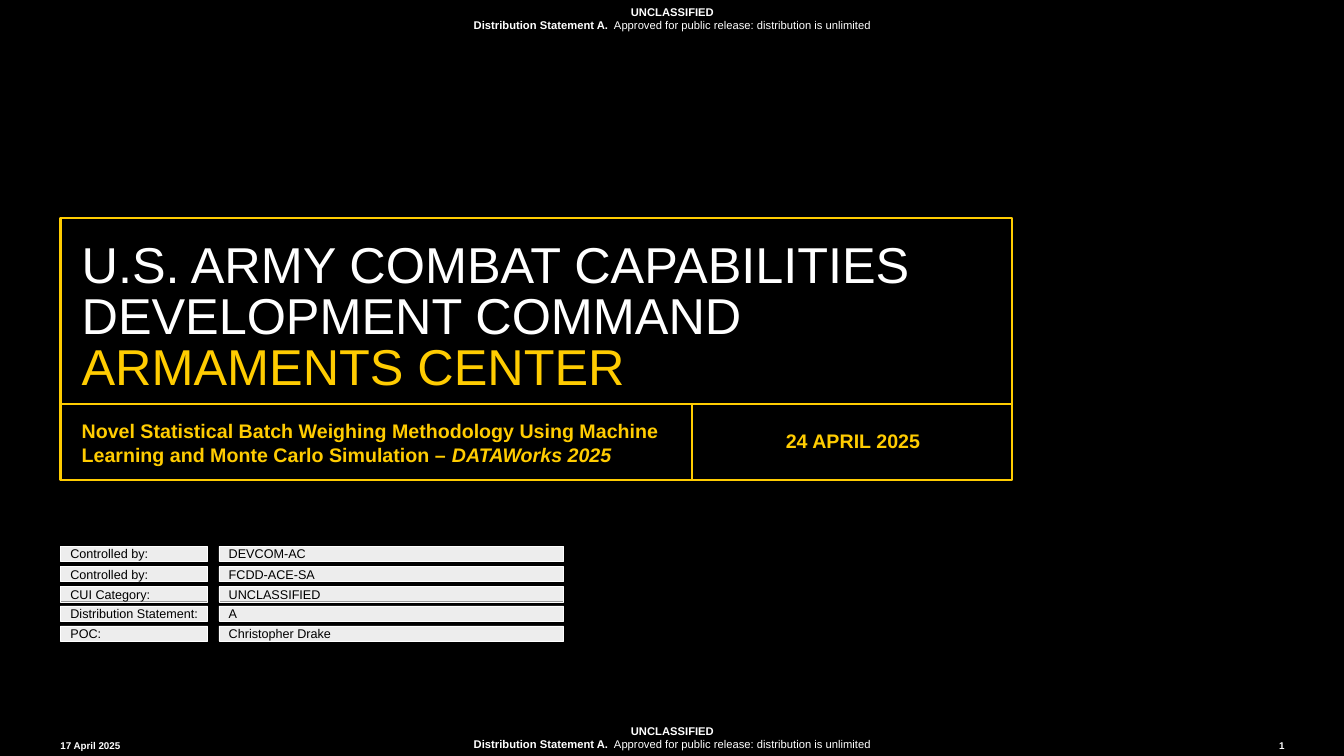
from lxml import etree
from pptx import Presentation
from pptx import util as u
from pptx.dml.color import RGBColor
from pptx.enum import shapes, text
from pptx.oxml.ns import qn

PX = 9144  # 100 px to the inch
COLORS = {"black": "000000", "white": "FFFFFF", "gold": "FFCC01"}
RGB = {name: RGBColor.from_string(value) for name, value in COLORS.items()}
LEFT, CENTER, RIGHT = text.PP_ALIGN.LEFT, text.PP_ALIGN.CENTER, text.PP_ALIGN.RIGHT
TOP, MIDDLE, BOTTOM = text.MSO_ANCHOR.TOP, text.MSO_ANCHOR.MIDDLE, text.MSO_ANCHOR.BOTTOM

prs = Presentation()
prs.slide_width, prs.slide_height = 1333 * PX, 750 * PX
s = prs.slides.add_slide(prs.slide_layouts[6])
s.background.fill.solid()
s.background.fill.fore_color.rgb = RGB["black"]


def write(sp, paragraphs, size, color, bold=False, align=LEFT, anchor=TOP,
          margins=(0, 0, 0, 0), spacing=1.0):
    """Fill a shape with paragraphs of (text, format changes) runs."""
    tf = sp.text_frame
    tf.word_wrap, tf.vertical_anchor = True, anchor
    for side, margin in zip(("left", "top", "right", "bottom"), margins):
        setattr(tf, f"margin_{side}", margin * PX)
    for i, runs in enumerate(paragraphs):
        p = tf.add_paragraph() if i else tf.paragraphs[0]
        p.alignment, p.line_spacing = align, spacing
        for words, changes in runs:
            for j, line in enumerate(words.split("\n")):
                if j:
                    p.add_line_break()
                if not line:
                    continue
                r = p.add_run()
                r.text = line
                r.font.color.rgb = RGB[changes.get("color", color)]
                font = {"name": "Arial", "size": u.Pt(size), "bold": bold}
                font.update((k, v) for k, v in changes.items() if k != "color")
                for name, value in font.items():
                    setattr(r.font, name, value)


def textbox(box, *args, **formats):
    write(s.shapes.add_textbox(*(n * PX for n in box)), *args, **formats)


# Gold frame with its two dividers
frame = s.shapes.add_shape(shapes.MSO_SHAPE.RECTANGLE, 60 * PX, 216 * PX, 944 * PX, 260 * PX)
frame.shadow.inherit = False
frame.fill.background()
dividers = [s.shapes.add_connector(shapes.MSO_CONNECTOR.STRAIGHT, *(n * PX for n in ends))
            for ends in ((60, 401, 1004, 401), (686, 401, 686, 476))]
for divider in dividers:
    etree.SubElement(divider._element.spPr, qn("a:effectLst"))
for sp in (frame, *dividers):
    sp.line.color.rgb = RGB["gold"]
    sp.line.width = u.Pt(1.5)

# Title, subtitle and event date
textbox((81, 241, 911, 145),
        [[("U.S. ARMY COMBAT CAPABILITIES\nDEVELOPMENT COMMAND\n", {}),
          ("ARMAMENTS CENTER", {"color": "gold"})]],
        36, "white", spacing=0.84)
textbox((81, 414, 594, 50),
        [[("Novel Statistical Batch Weighing Methodology Using Machine Learning "
           "and Monte Carlo Simulation – ", {}),
          ("DATAWorks 2025", {"italic": True})]],
        14, "gold", bold=True, anchor=MIDDLE)
textbox((699, 414, 294, 50), [[("24 APRIL 2025", {})]],
        14, "gold", bold=True, align=CENTER, anchor=MIDDLE, spacing=0.84)

# Control block: label and value bars
controls = [
    ("Controlled by:", "DEVCOM-AC"),
    ("Controlled by:", "FCDD-ACE-SA"),
    ("CUI Category:", "UNCLASSIFIED"),
    ("Distribution Statement:", "A"),
    ("POC:", "Christopher Drake"),
]
columns = [(60, 146, 0), (217, 342, 40)]  # left, width, right margin
for row, entries in enumerate(controls):
    top = round(542 + row * 19.75)
    for words, (left, width, inset) in zip(entries, columns):
        sp = s.shapes.add_shape(shapes.MSO_SHAPE.RECTANGLE,
                                left * PX, top * PX, width * PX, 15 * PX)
        sp.shadow.inherit = False
        sp.fill.solid()
        sp.fill.fore_color.rgb = sp.line.color.rgb = RGB["white"]
        sp.line.width = u.Pt(0.25)
        fill_color = sp._element.spPr.find(qn("a:solidFill"))[0]
        etree.SubElement(fill_color, qn("a:alpha"), val="93000")
        write(sp, [[(words, {})]], 9, "black", anchor=MIDDLE, margins=(10, 0, inset, 0))

# Classification marking at the top and bottom
marking = [
    [("UNCLASSIFIED", {})],
    [("Distribution Statement A.", {}),
     ("\u00a0 Approved for public release: distribution is unlimited", {"bold": False})],
]
for top, anchor in ((0, TOP), (713, BOTTOM)):
    textbox((152, top, 1030, 37), marking, 8, "white", bold=True,
            align=CENTER, anchor=anchor, margins=(0, 5, 0, 5))

# Footer date and slide number
for left, width, words, align in ((60, 90, "17 April 2025", LEFT), (1226, 48, "1", RIGHT)):
    textbox((left, 725, width, 25), [[(words, {})]], 7, "white", bold=True,
            align=align, anchor=BOTTOM, margins=(0, 5, 0, 5))

prs.save("out.pptx")
